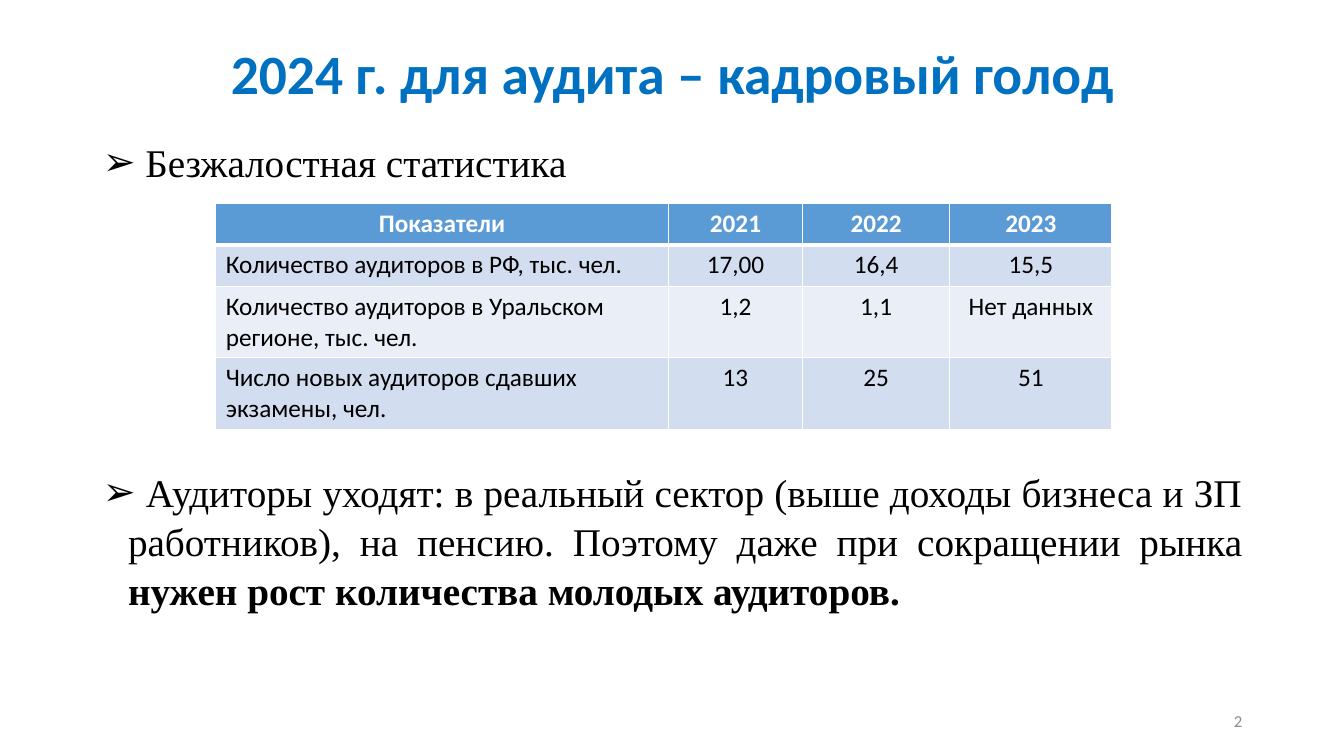
import pptx
import pptx.util
import pptx.dml.color
import pptx.enum.text
import pptx.oxml
import pptx.oxml.ns
from pptx.util import Inches

COLORS = {
    "title": "0070C0",
    "text": "000000",
    "page": "8C8C8C",
    "white": "FFFFFF",
    "header": "5B9BD5",
    "odd": "D2DEEF",
    "even": "EAEFF7",
}
ALIGN = pptx.enum.text.PP_ALIGN
ANCHOR = pptx.enum.text.MSO_ANCHOR

INDICATORS = [
    ["Показатели", "2021", "2022", "2023"],
    ["Количество аудиторов в РФ, тыс. чел.", "17,00", "16,4", "15,5"],
    ["Количество аудиторов в Уральском регионе, тыс. чел.", "1,2", "1,1", "Нет данных"],
    ["Число новых аудиторов сдавших экзамены, чел.", "13", "25", "51"],
]
COLUMN_WIDTHS = [4.49, 1.33, 1.46, 1.61]
ROW_HEIGHTS = [0.41, 0.41, 0.71, 0.71]


def rgb(name):
    return pptx.dml.color.RGBColor.from_string(COLORS[name])


def format_font(font, face, size, color, bold=False):
    font.name = face
    font.size = pptx.util.Pt(size)
    font.color.rgb = rgb(color)
    font.bold = bold


def place(shape, left, top, width, height):
    shape.left, shape.top = Inches(left), Inches(top)
    shape.width, shape.height = Inches(width), Inches(height)


def fill_title(title, text):
    place(title, 0.92, 0.4, 11.5, 0.72)
    frame = title.text_frame
    frame.text = text
    frame.auto_size = pptx.enum.text.MSO_AUTO_SIZE.NONE
    frame.vertical_anchor = ANCHOR.MIDDLE
    heading = frame.paragraphs[0]
    heading.alignment = ALIGN.CENTER
    heading.line_spacing = 0.9
    format_font(heading.font, "Calibri", 39.6, "title", True)


def set_bullet(paragraph, char):
    properties = paragraph._p.get_or_add_pPr()
    properties.set("marL", str(Inches(0.25)))
    properties.set("indent", str(-Inches(0.25)))
    bullet = pptx.oxml.parse_xml(
        f'<a:buChar {pptx.oxml.ns.nsdecls("a")} char="{char}"/>')
    properties.append(bullet)


def format_point(point, alignment, gap_before):
    point.alignment = alignment
    point.space_before = pptx.util.Pt(gap_before)
    point.space_after = pptx.util.Pt(0)
    point.line_spacing = 1.04
    format_font(point.font, "Times New Roman", 28, "text")
    set_bullet(point, "➢")


def fill_body(body):
    place(body, 0.92, 1.3, 11.5, 5.49)
    frame = body.text_frame
    frame.auto_size = pptx.enum.text.MSO_AUTO_SIZE.NONE
    statistics = frame.paragraphs[0]
    statistics.add_run().text = " Безжалостная статистика"
    format_point(statistics, ALIGN.LEFT, 0)

    # The gap before the second point leaves room for the table
    departures = frame.add_paragraph()
    departures.add_run().text = (
        " Аудиторы уходят: в реальный сектор (выше доходы бизнеса и ЗП "
        "работников), на пенсию. Поэтому даже при сокращении рынка ")
    conclusion = departures.add_run()
    conclusion.text = "нужен рост количества молодых аудиторов."
    conclusion.font.bold = True
    format_point(departures, ALIGN.JUSTIFY, 201)


def set_borders(cell, bottom_width):
    properties = cell._tc.get_or_add_tcPr()
    widths = {"lnL": 1, "lnR": 1, "lnT": 1, "lnB": bottom_width}
    for position, (side, width) in enumerate(widths.items()):
        border = pptx.oxml.parse_xml(
            f'<a:{side} {pptx.oxml.ns.nsdecls("a")} w="{pptx.util.Pt(width)}">'
            f'<a:solidFill><a:srgbClr val="{COLORS["white"]}"/></a:solidFill>'
            f'</a:{side}>')
        properties.insert(position, border)


def add_indicators(slide):
    frame = slide.shapes.add_table(
        len(INDICATORS), len(COLUMN_WIDTHS), Inches(2.14), Inches(2.02),
        Inches(sum(COLUMN_WIDTHS)), Inches(sum(ROW_HEIGHTS)))
    table = frame.table
    for column, width in zip(table.columns, COLUMN_WIDTHS):
        column.width = Inches(width)
    for row, height in zip(table.rows, ROW_HEIGHTS):
        row.height = Inches(height)
    for r, values in enumerate(INDICATORS):
        is_header = r == 0
        band = "header" if is_header else "odd" if r % 2 else "even"
        for c, value in enumerate(values):
            cell = table.cell(r, c)
            cell.text = value
            cell.fill.solid()
            cell.fill.fore_color.rgb = rgb(band)
            entry = cell.text_frame.paragraphs[0]
            entry.alignment = ALIGN.CENTER if is_header or c else ALIGN.LEFT
            format_font(entry.font, "Calibri", 18,
                        "white" if is_header else "text", is_header)
            set_borders(cell, 3 if is_header else 1)


def add_page_number(slide, number):
    box = slide.shapes.add_textbox(
        Inches(9.42), Inches(6.95), Inches(3), Inches(0.4))
    frame = box.text_frame
    frame.word_wrap = True
    frame.vertical_anchor = ANCHOR.MIDDLE
    frame.text = number
    page = frame.paragraphs[0]
    page.alignment = ALIGN.RIGHT
    format_font(page.font, "Calibri", 12, "page")


def main():
    presentation = pptx.Presentation()
    presentation.slide_width = Inches(13.33)
    presentation.slide_height = Inches(7.5)
    slide = presentation.slides.add_slide(presentation.slide_layouts[1])

    # Title and bulleted points
    fill_title(slide.shapes.title, "2024 г. для аудита – кадровый голод")
    fill_body(slide.placeholders[1])

    # Audit statistics and page number
    add_indicators(slide)
    add_page_number(slide, "2")
    presentation.save("out.pptx")


if __name__ == "__main__":
    main()
